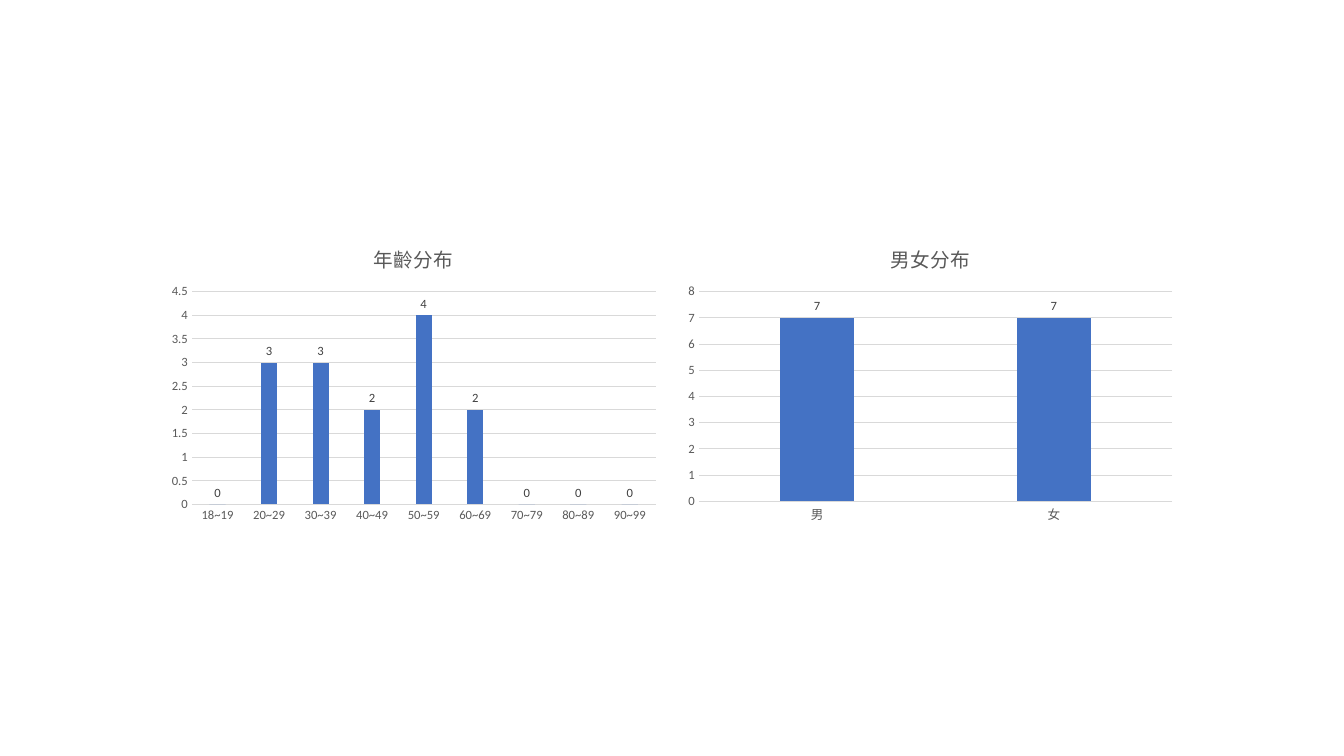
"""Build a slide with the age and gender distribution charts."""
from dataclasses import dataclass

from pptx import Presentation
from pptx.chart.data import CategoryChartData
from pptx.dml.color import RGBColor
from pptx.enum.chart import XL_CHART_TYPE, XL_LABEL_POSITION, XL_TICK_MARK
from pptx.text.text import Font
from pptx.util import Emu, Pt

PX = 9525
FONT = "Calibri"
BLUE = RGBColor(0x44, 0x72, 0xC4)
BLACK = RGBColor(0x00, 0x00, 0x00)
DARK = RGBColor(0x40, 0x40, 0x40)
GRAY = RGBColor(0x59, 0x59, 0x59)
LIGHT = RGBColor(0xD9, 0xD9, 0xD9)
TOP, WIDTH, HEIGHT = 216, 480, 288


@dataclass(frozen=True)
class Distribution:
    """A titled column chart and its left edge in px."""
    title: str
    left: int
    counts: dict[str, int]


DISTRIBUTIONS = [
    Distribution("年齡分布", 154, {
        "18~19": 0, "20~29": 3, "30~39": 3, "40~49": 2, "50~59": 4,
        "60~69": 2, "70~79": 0, "80~89": 0, "90~99": 0}),
    Distribution("男女分布", 646, {"男": 7, "女": 7}),
]


def px(n: int) -> Emu:
    """Convert px to EMU."""
    return Emu(n * PX)


def set_font(font: Font, size: int, color: RGBColor) -> None:
    """Set the typeface, size and colour of regular text."""
    font.name = FONT
    font.size = Pt(size)
    font.bold = False
    font.color.rgb = color


def add_distribution(s, item: Distribution) -> None:
    """Draw one distribution as a column chart."""
    data = CategoryChartData()
    data.categories = list(item.counts)
    data.add_series("Series 1", list(item.counts.values()))
    chart = s.shapes.add_chart(
        XL_CHART_TYPE.COLUMN_CLUSTERED,
        px(item.left), px(TOP), px(WIDTH), px(HEIGHT), data).chart
    set_font(chart.font, 10, BLACK)
    chart.has_legend = False

    tf = chart.chart_title.text_frame
    tf.text = item.title
    set_font(tf.paragraphs[0].font, 14, GRAY)
    chart.chart_title.include_in_layout = False

    for axis in (chart.category_axis, chart.value_axis):
        axis.major_tick_mark = XL_TICK_MARK.NONE
        axis.minor_tick_mark = XL_TICK_MARK.NONE
        set_font(axis.tick_labels.font, 9, GRAY)
    chart.value_axis.format.line.fill.background()
    for line in (chart.category_axis.format.line,
                 chart.value_axis.major_gridlines.format.line):
        line.color.rgb = LIGHT
        line.width = Pt(0.75)

    plot = chart.plots[0]
    plot.vary_by_categories = False
    plot.gap_width = 219
    plot.overlap = -27
    plot.series[0].format.fill.solid()
    plot.series[0].format.fill.fore_color.rgb = BLUE
    plot.has_data_labels = True
    labels = plot.data_labels
    labels.show_value = True
    labels.position = XL_LABEL_POSITION.OUTSIDE_END
    set_font(labels.font, 9, DARK)


def main() -> None:
    """Build and save the slide."""
    prs = Presentation()
    prs.slide_width, prs.slide_height = px(1280), px(720)
    s = prs.slides.add_slide(prs.slide_layouts[6])
    for item in DISTRIBUTIONS:
        add_distribution(s, item)
    prs.save("out.pptx")


if __name__ == "__main__":
    main()
